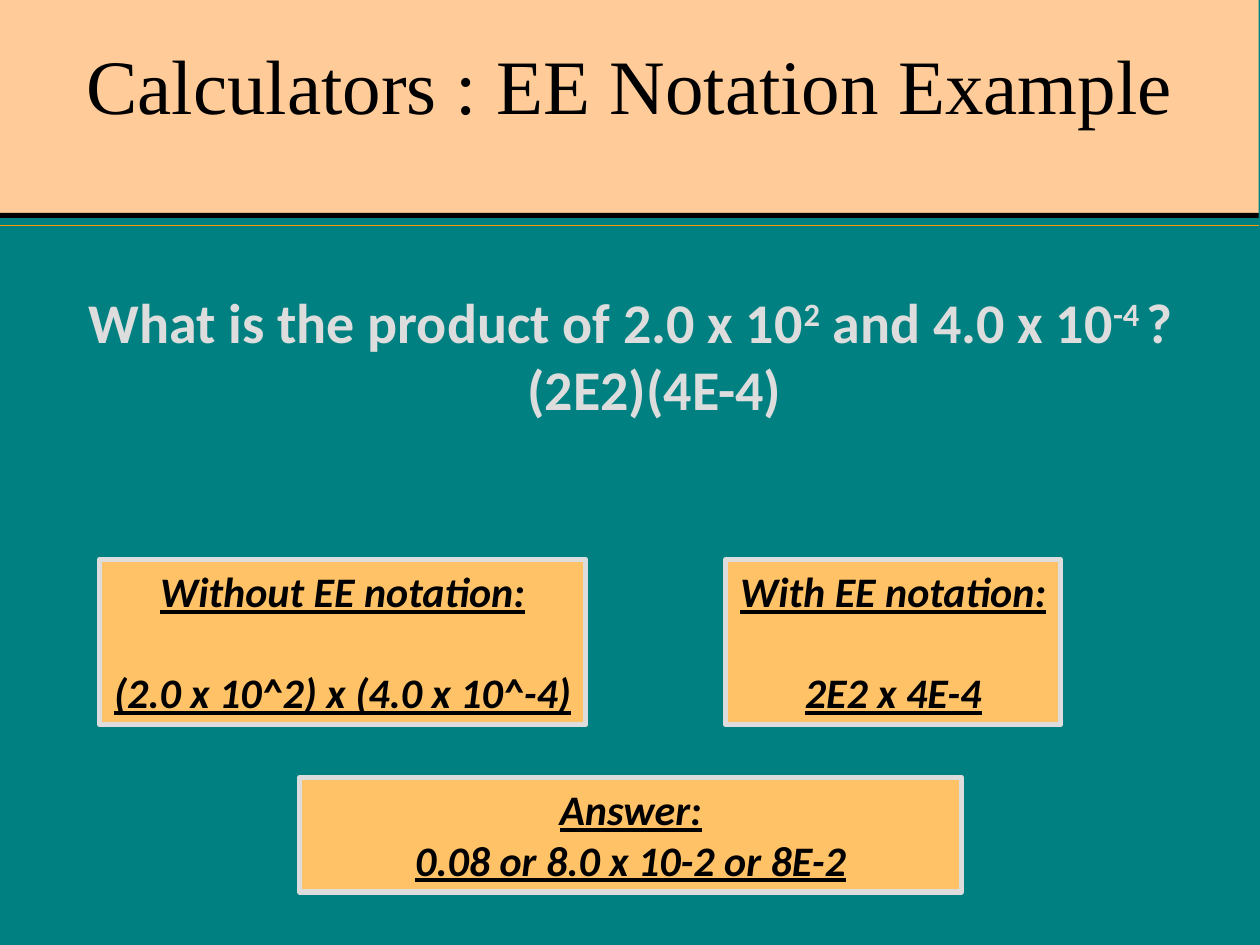
from dataclasses import dataclass

from lxml.etree import SubElement
from pptx import Presentation
from pptx.dml.color import RGBColor
from pptx.enum.shapes import MSO_CONNECTOR as Connector, MSO_SHAPE as Shape
from pptx.enum.text import MSO_ANCHOR as Anchor, MSO_AUTO_SIZE as AutoSize, PP_ALIGN as Align
from pptx.oxml.ns import qn
from pptx.util import Inches, Pt


@dataclass(frozen=True)
class Theme:
    teal: RGBColor = RGBColor(0x00, 0x80, 0x80)
    peach: RGBColor = RGBColor(0xFF, 0xCC, 0x99)
    amber: RGBColor = RGBColor(0xFF, 0xC2, 0x66)
    orange: RGBColor = RGBColor(0xFF, 0x99, 0x00)
    silver: RGBColor = RGBColor(0xDD, 0xDD, 0xDD)
    black: RGBColor = RGBColor(0x00, 0x00, 0x00)
    title_font: str = "Times New Roman"
    text_font: str = "Calibri"
    title_size: int = 44
    question_size: int = 32
    box_size: int = 24
    line_gap: int = 29  # one line of box text


THEME = Theme()
WIDTH, HEIGHT = 10, 7.5
BAND_WIDTH, BAND_HEIGHT, RULE_HEIGHT = 9.99, 1.69, 0.04
ACCENT_Y = 1.79
BOX_ROW = 4.44


def place(shape, left, top, width, height):
    shape.left, shape.top = Inches(left), Inches(top)
    shape.width, shape.height = Inches(width), Inches(height)


def add_run(paragraph, text, font, size, color, bold=False):
    run = paragraph.add_run()
    run.text = text
    run.font.name, run.font.size, run.font.bold = font, Pt(size), bold
    run.font.color.rgb = color
    return run


def add_rectangle(slide, left, top, width, height, fill):
    shape = slide.shapes.add_shape(
        Shape.RECTANGLE, Inches(left), Inches(top), Inches(width), Inches(height))
    shape.shadow.inherit = False
    shape.fill.solid()
    shape.fill.fore_color.rgb = fill
    shape.line.fill.background()
    return shape


def add_header(slide):
    add_rectangle(slide, 0, 0, BAND_WIDTH, BAND_HEIGHT, THEME.peach)
    add_rectangle(slide, 0, BAND_HEIGHT, BAND_WIDTH, RULE_HEIGHT, THEME.black)
    accent = slide.shapes.add_connector(
        Connector.STRAIGHT, 0, Inches(ACCENT_Y), Inches(BAND_WIDTH), Inches(ACCENT_Y))
    accent.line.color.rgb = THEME.orange
    accent.line.width = Pt(1)
    SubElement(accent._element.spPr, qn("a:effectLst"))


def fill_title(slide, text):
    title = slide.shapes.title
    place(title, 0.5, 0.3, WIDTH - 1, 0.78)
    frame = title.text_frame
    frame.auto_size, frame.vertical_anchor = AutoSize.NONE, Anchor.BOTTOM
    paragraph = frame.paragraphs[0]
    paragraph.alignment = Align.CENTER
    add_run(paragraph, text, THEME.title_font, THEME.title_size, THEME.black)
    # Bring the title in front of the header band
    slide.shapes._spTree.append(title._element)


def fill_question(slide, parts):
    """Write (text, is_superscript) parts as one centred, hanging paragraph."""
    body = slide.placeholders[1]
    place(body, 0.38, 2.23, 9.25, 0.83)
    body.fill.solid()
    body.fill.fore_color.rgb = THEME.teal
    frame = body.text_frame
    frame.auto_size, frame.vertical_anchor = AutoSize.NONE, Anchor.TOP
    paragraph = frame.paragraphs[0]
    paragraph.alignment = Align.CENTER
    properties = paragraph._p.get_or_add_pPr()
    properties.set("marL", str(Inches(0.38)))
    properties.set("indent", str(-Inches(0.38)))
    SubElement(properties, qn("a:buNone"))
    for text, is_superscript in parts:
        run = add_run(paragraph, text, THEME.text_font, THEME.question_size,
                      THEME.silver, bold=True)
        if is_superscript:
            run.font._element.set("baseline", "30000")


def add_box(slide, left, top, width, height, heading, result, gap=0):
    box = add_rectangle(slide, left, top, width, height, THEME.amber)
    box.line.color.rgb = THEME.silver
    box.line.width = Pt(3)
    frame = box.text_frame
    frame.word_wrap, frame.vertical_anchor = False, Anchor.TOP
    frame.auto_size = AutoSize.SHAPE_TO_FIT_TEXT
    first, second = frame.paragraphs[0], frame.add_paragraph()
    second.space_before = Pt(gap)
    for paragraph, text in ((first, heading), (second, result)):
        paragraph.alignment = Align.CENTER
        run = add_run(paragraph, text, THEME.text_font, THEME.box_size,
                      THEME.black, bold=True)
        run.font.italic = run.font.underline = True


def main():
    presentation = Presentation()
    presentation.slide_width, presentation.slide_height = Inches(WIDTH), Inches(HEIGHT)
    slide = presentation.slides.add_slide(presentation.slide_layouts[1])
    slide.background.fill.solid()
    slide.background.fill.fore_color.rgb = THEME.teal

    # Header and question
    add_header(slide)
    fill_question(slide, [
        ("What is the product of 2.0 x 10", False), ("2", True),
        (" and 4.0 x 10", False), ("-4 ", True), ("? (2E2)(4E-4)", False)])

    # Two ways to key it in, then the answer
    add_box(slide, 0.79, BOX_ROW, 3.86, 1.31, "Without EE notation:",
            "(2.0 x 10^2) x (4.0 x 10^-4)", THEME.line_gap)
    add_box(slide, 5.76, BOX_ROW, 2.66, 1.31, "With EE notation:",
            "2E2 x 4E-4", THEME.line_gap)
    add_box(slide, 2.38, 6.17, 5.25, 0.91, "Answer:", "0.08 or 8.0 x 10-2 or 8E-2")

    fill_title(slide, "Calculators : EE Notation Example")
    presentation.save("out.pptx")


if __name__ == "__main__":
    main()
